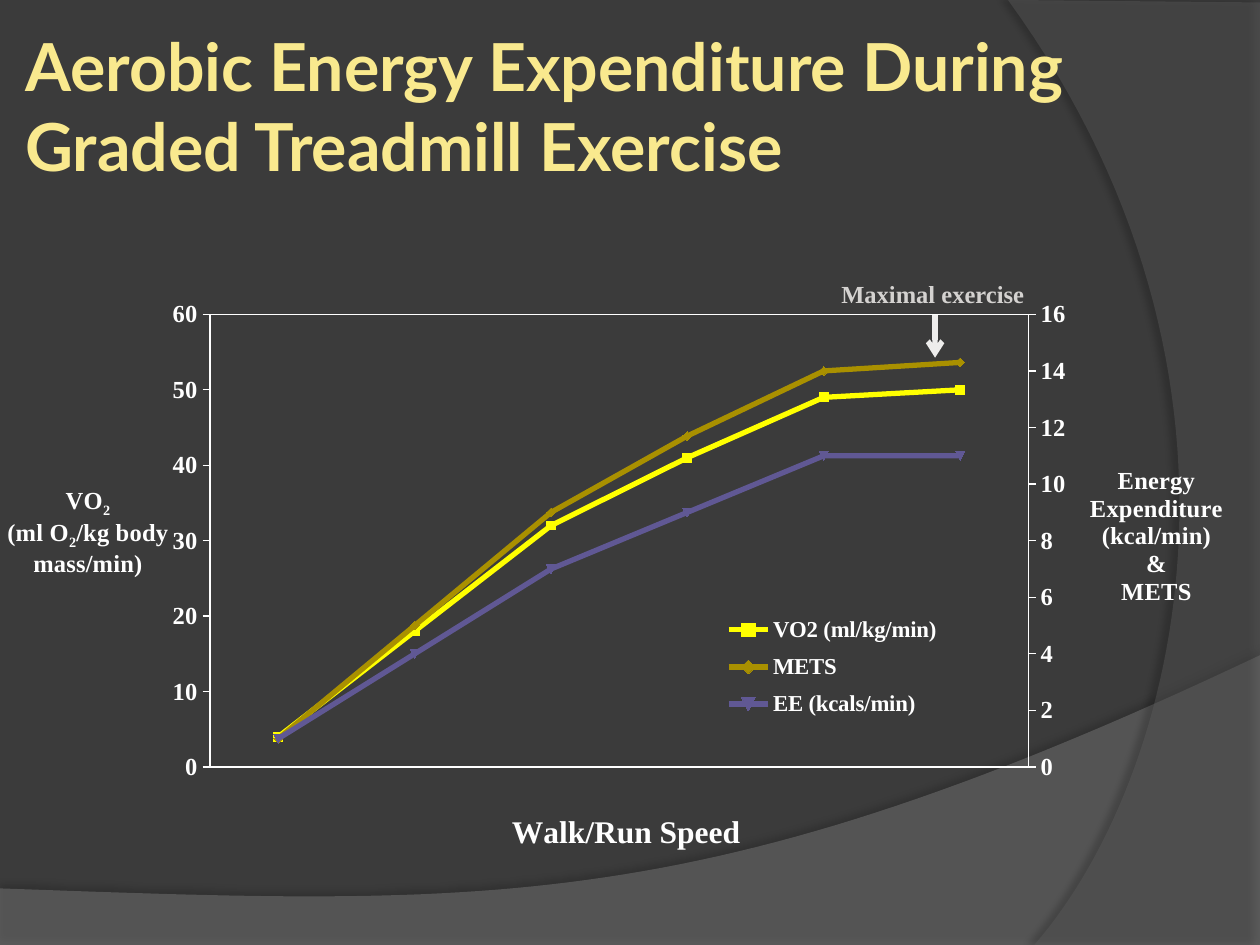
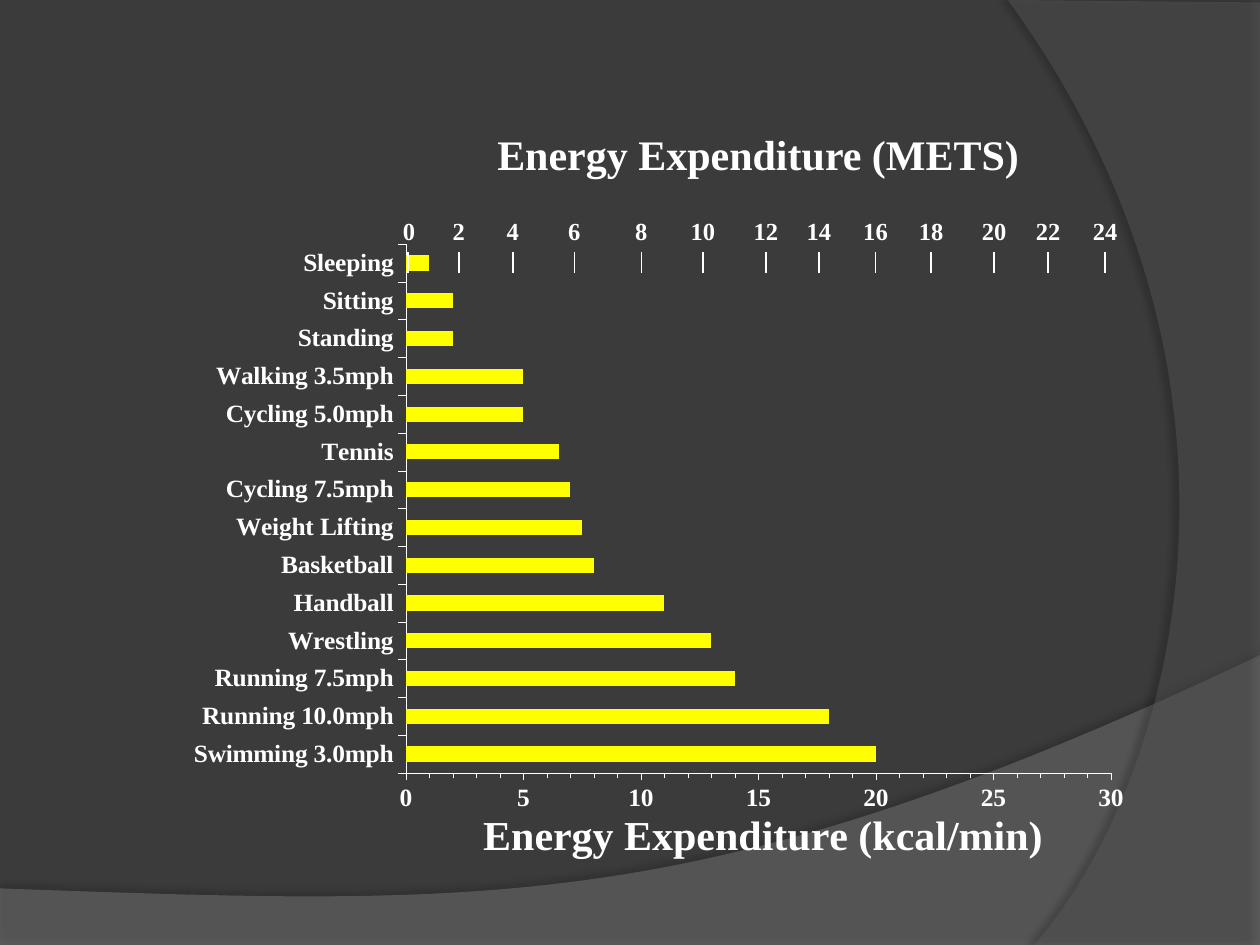
from collections import namedtuple
from copy import deepcopy

from lxml.etree import SubElement
from pptx import Presentation
from pptx.chart.axis import ValueAxis
from pptx.chart.data import CategoryChartData
from pptx.dml.color import RGBColor
from pptx.enum.chart import (XL_CHART_TYPE, XL_LEGEND_POSITION, XL_MARKER_STYLE,
                             XL_TICK_LABEL_POSITION, XL_TICK_MARK)
from pptx.enum.shapes import MSO_CONNECTOR
from pptx.enum.text import MSO_ANCHOR, MSO_AUTO_SIZE, PP_ALIGN
from pptx.oxml import parse_xml
from pptx.oxml.ns import nsdecls, qn
from pptx.util import Cm, Pt

BACKDROP = RGBColor(0x3B, 0x3B, 0x3B)
FLOOR = RGBColor(0x7F, 0x7F, 0x7F)
SIDE = RGBColor(0x5E, 0x5E, 0x5E)
TITLE = RGBColor(0xF9, 0xE9, 0x8E)
WHITE = RGBColor(0xFF, 0xFF, 0xFF)
YELLOW = RGBColor(0xFF, 0xFF, 0x00)
OCHRE = RGBColor(0xA9, 0x90, 0x00)
VIOLET = RGBColor(0x60, 0x58, 0x94)
ARROW = RGBColor(0xEE, 0xED, 0xEC)
CALLOUT = RGBColor(0xD4, 0xD2, 0xD0)
SERIF = "Times New Roman"

Box = namedtuple("Box", "left top width height")

EXERTION = [
    ("VO2 (ml/kg/min)", (4, 18, 32, 41, 49, 50), YELLOW),
    ("METS", (1, 5, 9, 11.7, 14, 14.3), OCHRE),
    ("EE (kcals/min)", (1, 4, 7, 9, 11, 11), VIOLET),
]
ACTIVITIES = {
    "Swimming 3.0mph": 20, "Running 10.0mph": 18, "Running 7.5mph": 14,
    "Wrestling": 13, "Handball": 11, "Basketball": 8, "Weight Lifting": 7.5,
    "Cycling 7.5mph": 7, "Tennis": 6.5, "Cycling 5.0mph": 5,
    "Walking 3.5mph": 5, "Standing": 2, "Sitting": 2, "Sleeping": 1,
}
METS_TICKS = (0.36, 1.38, 2.47, 3.71, 5.06, 6.3, 7.57, 8.64, 9.78, 10.9,
              12.17, 13.26, 14.41)


def emu(box):
    """Turn a box in centimetres into four lengths."""
    return [Cm(side) for side in box]


def style_font(font, size, color=WHITE, name=SERIF):
    """Make a font bold with the given size, colour and face."""
    font.size, font.bold, font.name = Pt(size), True, name
    font.color.rgb = color


def bezier(start, first, second, end, steps=60):
    """Return points along a cubic curve."""
    weights = [((1 - t) ** 3, 3 * t * (1 - t) ** 2, 3 * t * t * (1 - t), t ** 3)
               for t in (step / steps for step in range(1, steps + 1))]
    return [tuple(sum(w * p[axis] for w, p in zip(row, (start, first, second, end)))
                  for axis in (0, 1)) for row in weights]


def add_sweep(slide, outline, color, opacity, shade):
    """Draw a translucent outline with a soft shadow and return its element."""
    points = [(Cm(x), Cm(y)) for x, y in outline]
    builder = slide.shapes.build_freeform(*points[0], scale=1.0)
    builder.add_line_segments(points[1:], close=True)
    sweep = builder.convert_to_shape()
    sweep.fill.solid()
    sweep.fill.fore_color.rgb = color
    sweep.line.fill.background()
    properties = sweep.element.spPr
    tint = properties.find(qn("a:solidFill")).find(qn("a:srgbClr"))
    SubElement(tint, qn("a:alpha"), val=str(opacity * 1000))
    alpha, distance, angle = shade
    properties.append(parse_xml(
        f'<a:effectLst {nsdecls("a")}><a:outerShdw blurRad="{Pt(4)}" '
        f'dist="{Pt(distance)}" dir="{angle * 60000}" algn="ctr" rotWithShape="0">'
        f'<a:srgbClr val="000000"><a:alpha val="{alpha * 1000}"/></a:srgbClr>'
        '</a:outerShdw></a:effectLst>'))
    return sweep.element


def dress_master(prs, slide):
    """Give the master its background and the two sweeping bands."""
    master = prs.slide_master
    master.background.fill.solid()
    master.background.fill.fore_color.rgb = BACKDROP
    floor = [(0, 17.91), (0, 19.05), (25.4, 19.05), (25.4, 13.21)]
    floor += bezier(floor[-1], (14.2, 18.52), (9.93, 18.26), (0, 17.91))
    side = [(25.4, 0.05), (25.4, 19.05), (20.85, 19.05)]
    side += bezier(side[-1], (23.75, 15.72), (25.86, 7.62), (20.32, 0))
    bands = [add_sweep(slide, floor, FLOOR, 45, (35, 3.5, 270)),
             add_sweep(slide, side, SIDE, 40, (45, 4, 180))]
    for order, band in enumerate(bands):
        band.nvSpPr.cNvPr.set("id", str(20 + order))
        master.shapes.element.insert(2 + order, band)


def add_label(slide, box, text, size, color=WHITE, wrap=True, align=PP_ALIGN.LEFT):
    """Add one line of bold serif text and return its paragraph."""
    frame = slide.shapes.add_textbox(*emu(box)).text_frame
    frame.word_wrap = wrap
    paragraph = frame.paragraphs[0]
    paragraph.alignment = align
    run = paragraph.add_run()
    run.text = text
    style_font(run.font, size, color)
    return paragraph


def add_stroke(slide, x, top, bottom, color, width):
    """Draw a vertical line without a shadow."""
    stroke = slide.shapes.add_connector(
        MSO_CONNECTOR.STRAIGHT, Cm(x), Cm(top), Cm(x), Cm(bottom))
    stroke.line.color.rgb = color
    stroke.line.width = Pt(width)
    SubElement(stroke.element.spPr, qn("a:effectLst"))
    return stroke


def set_layout(parent, index, **fractions):
    """Fix a chart part at fractions of the chart's size."""
    for previous in parent.findall(qn("c:layout")):
        parent.remove(previous)
    modes = '<c:xMode val="edge"/><c:yMode val="edge"/>'
    if parent.tag == qn("c:plotArea"):
        modes = '<c:layoutTarget val="inner"/>' + modes
    values = "".join(f'<c:{key} val="{value}"/>' for key, value in fractions.items())
    parent.insert(index, parse_xml(
        f'<c:layout {nsdecls("c")}><c:manualLayout>{modes}{values}'
        '</c:manualLayout></c:layout>'))


def title_axis(axis, lines, size, x, y):
    """Write an upright axis title; each line is a list of text pieces, odd ones lowered."""
    title = axis.axis_title
    frame = title.text_frame
    for number, pieces in enumerate(lines):
        paragraph = frame.add_paragraph() if number else frame.paragraphs[0]
        paragraph.alignment = PP_ALIGN.CENTER
        for position, piece in enumerate(pieces):
            run = paragraph.add_run()
            run.text = piece
            style_font(run.font, size)
            if position % 2:
                run.font._element.set("baseline", "-25000")
    chart_title = frame._txBody.getparent().getparent()
    chart_title.find(".//" + qn("a:bodyPr")).set("rot", "0")
    set_layout(chart_title, 1, x=x, y=y)


def style_axis(axis, size, width):
    """Give an axis white labels, a white line and outer ticks, without a grid."""
    axis.has_major_gridlines = False
    axis.major_tick_mark = XL_TICK_MARK.OUTSIDE
    style_font(axis.tick_labels.font, size)
    axis.format.line.color.rgb = WHITE
    axis.format.line.width = Pt(width)


def add_right_axis(chart):
    """Move all series but the first to a second value axis and return it."""
    area = chart.element.find(".//" + qn("c:plotArea"))
    left_plot = area.find(qn("c:lineChart"))
    right_plot = deepcopy(left_plot)
    left_plot.addnext(right_plot)
    for series in left_plot.findall(qn("c:ser"))[1:]:
        left_plot.remove(series)
    right_plot.remove(right_plot.find(qn("c:ser")))
    speed, value = (deepcopy(area.find(qn(tag))) for tag in ("c:catAx", "c:valAx"))
    ids = {"speed": "50010", "value": "50020"}
    for axis_id, number in zip(right_plot.findall(qn("c:axId")), ids.values()):
        axis_id.set("val", number)
    for axis, own, other in ((speed, "speed", "value"), (value, "value", "speed")):
        axis.find(qn("c:axId")).set("val", ids[own])
        axis.find(qn("c:crossAx")).set("val", ids[other])
    speed.find(qn("c:delete")).set("val", "1")
    value.find(qn("c:axPos")).set("val", "r")
    value.find(qn("c:crosses")).set("val", "max")
    area.findall(qn("c:valAx"))[-1].addnext(value)
    value.addnext(speed)
    return ValueAxis(value)


def add_exertion_chart(slide, box):
    """Plot oxygen uptake, METS and energy against speed, with the callout."""
    data = CategoryChartData()
    data.categories = [str(stage) for stage in range(1, 7)]
    for name, values, _ in EXERTION:
        data.add_series(name, values)
    chart = slide.shapes.add_chart(XL_CHART_TYPE.LINE_MARKERS, *emu(box), data).chart
    chart.has_title = False
    style_font(chart.font, 10, name="Arial")
    for series, (_, _, color) in zip(chart.plots[0].series, EXERTION):
        series.smooth = False
        series.format.line.color.rgb = color
        series.format.line.width = Pt(3)
        series.marker.style = XL_MARKER_STYLE.AUTOMATIC
        series.marker.size = 5
        series.marker.format.fill.solid()
        series.marker.format.fill.fore_color.rgb = color
        series.marker.format.line.color.rgb = color

    uptake, speed = chart.value_axis, chart.category_axis
    style_axis(uptake, 14, 0.75)
    uptake.minimum_scale, uptake.maximum_scale, uptake.major_unit = 0, 60, 10
    energy = add_right_axis(chart)
    energy.maximum_scale, energy.major_unit = 16, 2
    speed.major_tick_mark = XL_TICK_MARK.NONE
    speed.tick_label_position = XL_TICK_LABEL_POSITION.NONE
    speed.format.line.fill.background()
    title_axis(uptake, [["VO", "2"], ["(ml O", "2", "/kg body"], ["mass/min)"]], 14, 0.003, 0.328)
    title_axis(energy, [["Energy"], ["Expenditure"], ["(kcal/min)"], ["&"], ["METS"]],
               14, 0.884, 0.295)
    title_axis(speed, [["Walk/Run Speed"]], 18, 0.412, 0.87)

    chart.has_legend = True
    chart.legend.position = XL_LEGEND_POSITION.RIGHT
    chart.legend.include_in_layout = False
    style_font(chart.legend.font, 13)
    set_layout(chart.element.find(".//" + qn("c:legend")), 1,
               x=0.585, y=0.535, w=0.185, h=0.205)
    area = chart.element.find(".//" + qn("c:plotArea"))
    set_layout(area, 0, x=0.171, y=0.051, w=0.666, h=0.753)
    area.append(parse_xml(
        f'<c:spPr {nsdecls("c", "a")}><a:noFill/><a:ln w="{Pt(0.75)}"><a:solidFill>'
        f'<a:srgbClr val="{WHITE}"/></a:solidFill></a:ln></c:spPr>'))

    arrow = add_stroke(slide, box.left + 18.85, box.top + 0.63, box.top + 1.49, ARROW, 3)
    SubElement(arrow.element.spPr.find(qn("a:ln")), qn("a:tailEnd"), type="arrow")
    add_label(slide, Box(box.left + 16.71, box.top - 0.21, 4.24, 0.86),
              "Maximal exercise", 14, CALLOUT, wrap=False)


def add_activity_chart(slide, box):
    """Plot the energy cost of each activity as bars."""
    data = CategoryChartData()
    data.categories = list(ACTIVITIES)
    data.add_series("Series 1", list(ACTIVITIES.values()))
    chart = slide.shapes.add_chart(XL_CHART_TYPE.BAR_CLUSTERED, *emu(box), data).chart
    chart.has_title = chart.has_legend = False
    style_font(chart.font, 14.5)
    bars = chart.plots[0]
    bars.gap_width, bars.vary_by_categories = 150, False
    bars.series[0].format.fill.solid()
    bars.series[0].format.fill.fore_color.rgb = YELLOW
    for axis in (chart.category_axis, chart.value_axis):
        style_axis(axis, 14.5, 0.2)
    chart.category_axis.tick_label_position = XL_TICK_LABEL_POSITION.LOW
    energy = chart.value_axis
    energy.minimum_scale, energy.maximum_scale = 0, 30
    energy.major_unit, energy.minor_unit = 5, 1
    energy.minor_tick_mark = XL_TICK_MARK.OUTSIDE
    title_axis(energy, [["Energy Expenditure (kcal/min)"]], 24, 0.327, 0.907)
    set_layout(chart.element.find(".//" + qn("c:plotArea")), 0,
               x=0.261, y=0.016, w=0.667, h=0.847)


def add_mets_scale(slide, box):
    """Draw the upper METS scale with its heading, numbers and ticks."""
    add_label(slide, Box(box.left + 1.6, box.top, 11.63, 1.27),
              "Energy Expenditure (METS)", 24, align=PP_ALIGN.CENTER)
    numbers = "\t".join(str(2 * step) for step in range(len(METS_TICKS)))
    row = add_label(slide, Box(box.left, box.top + 1.78, box.width, 0.86), numbers, 14)
    stops = SubElement(row._p.get_or_add_pPr(), qn("a:tabLst"))
    for tick in METS_TICKS:
        add_stroke(slide, box.left + tick, box.top + 2.62, box.top + box.height, WHITE, 1)
        if tick != METS_TICKS[0]:
            SubElement(stops, qn("a:tab"), pos=str(Cm(tick - 0.25)), algn="ctr")


def fill_title(slide, box, text):
    """Place and format the slide title."""
    title = slide.shapes.title
    title.left, title.top, title.width, title.height = emu(box)
    frame = title.text_frame
    frame.auto_size, frame.word_wrap = MSO_AUTO_SIZE.NONE, True
    frame.vertical_anchor = MSO_ANCHOR.MIDDLE
    frame.margin_left = frame.margin_right = frame.margin_top = frame.margin_bottom = Cm(0.13)
    frame.paragraphs[0].alignment = PP_ALIGN.LEFT
    run = frame.paragraphs[0].add_run()
    run.text = text
    style_font(run.font, 37.8, TITLE, "Lato")


def main():
    """Build both slides and save them."""
    prs = Presentation()
    prs.slide_width, prs.slide_height = Cm(25.4), Cm(19.05)
    treadmill = prs.slides.add_slide(prs.slide_layouts[5])
    dress_master(prs, treadmill)
    fill_title(treadmill, Box(0.38, 0.43, 25.4, 3.38),
               "Aerobic Energy Expenditure During Graded Treadmill Exercise")
    add_exertion_chart(treadmill, Box(0, 5.72, 24.77, 12.12))
    activities = prs.slides.add_slide(prs.slide_layouts[6])
    add_activity_chart(activities, Box(2.62, 4.72, 21.31, 12.85))
    add_mets_scale(activities, Box(7.87, 2.46, 15.24, 3.05))
    prs.save("out.pptx")


if __name__ == "__main__":
    main()
